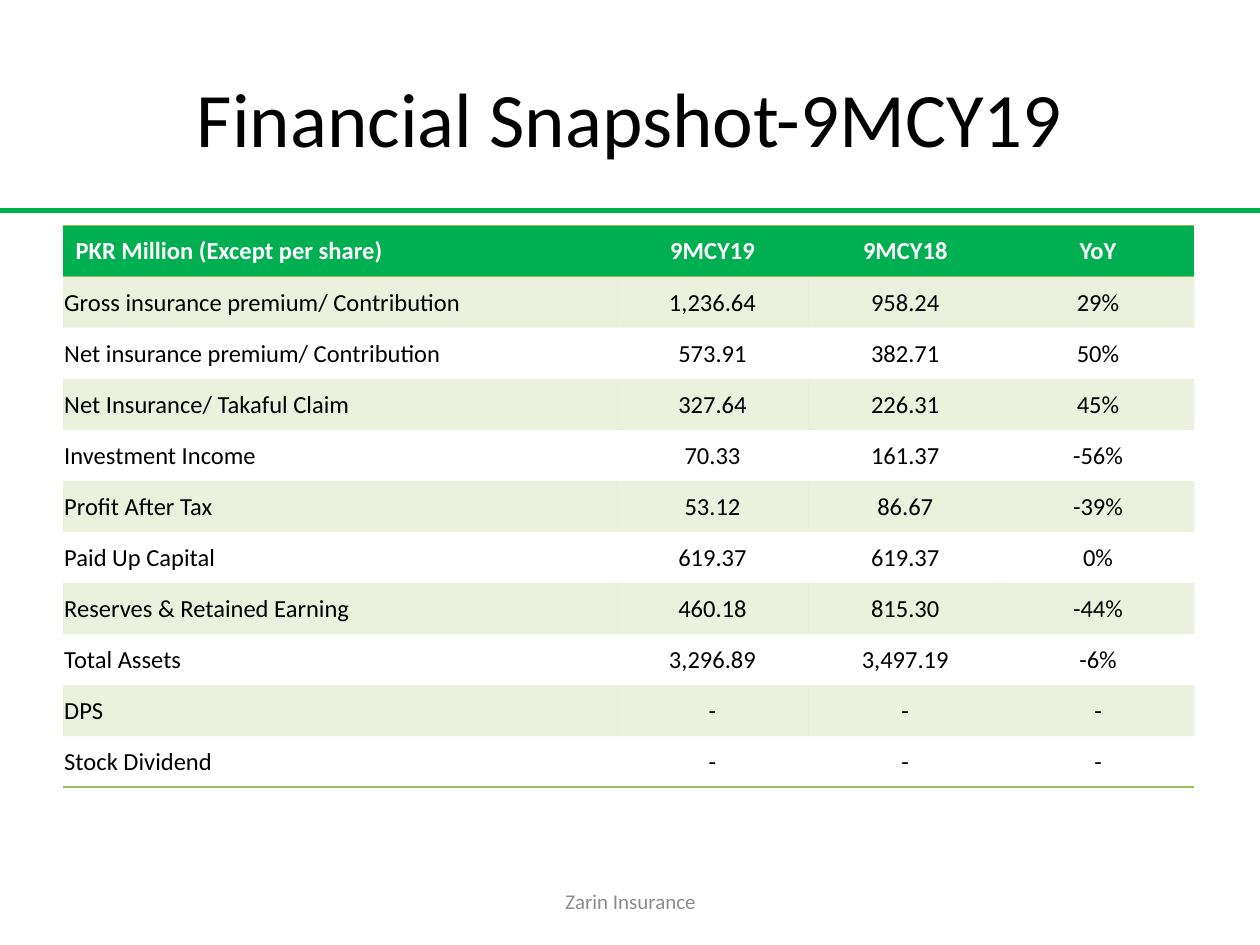
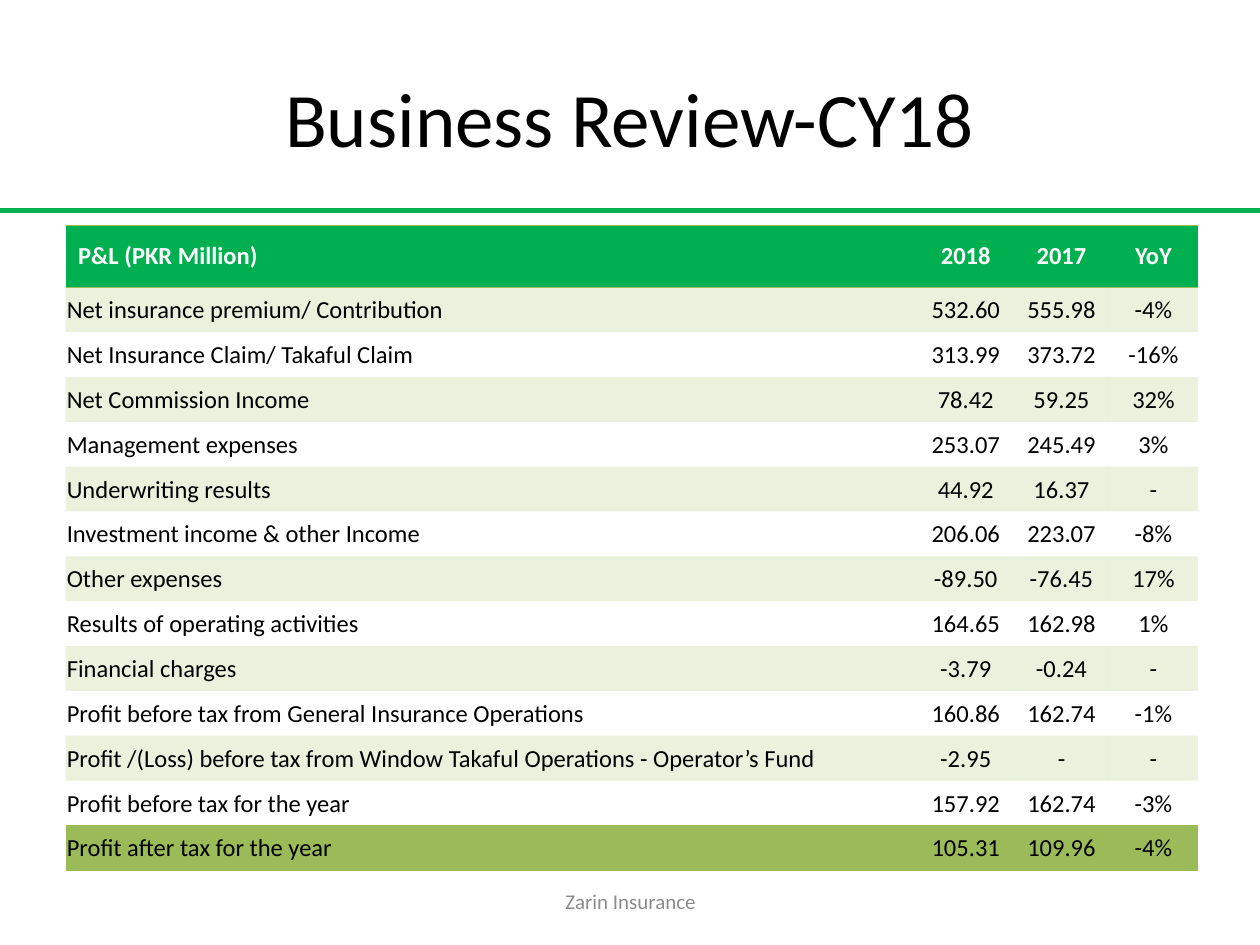
from dataclasses import dataclass

from lxml.etree import SubElement
from pptx import Presentation
from pptx.dml.color import RGBColor as Rgb
from pptx.enum.shapes import MSO_CONNECTOR as Connector
from pptx.enum.text import MSO_ANCHOR as Anchor, PP_ALIGN as Align
from pptx.oxml.ns import qn
from pptx.util import Emu, Inches, Pt

COLORS = {
    "green": "00B050", "olive": "9BBB59", "black": "000000",
    "white": "FFFFFF", "grey": "8C8C8C",
}
FONT = "Calibri"
FOOTER = "Zarin Insurance"
PLAIN_TABLE_STYLE = "{2D5ABB26-0587-4C30-8999-92F81FD0307C}"

# The page is a grid of 100 columns by 75 rows
WIDTH, HEIGHT = Inches(10), Inches(7.5)
COLUMN, ROW = WIDTH / 100, HEIGHT / 75
RULE_ROW = 16.7
TABLE_ROW = 17.9


@dataclass
class Report:
    title: str
    left: float             # grid columns
    widths: list[float]     # grid columns
    header_height: float    # grid rows
    height: float           # grid rows, header included
    rows: list[list[str]]


REPORTS = [
    Report("Financial Snapshot-9MCY19", 5, [43.9, 15.3, 15.3, 15.3], 4.06, 44.6, [
        ["PKR Million (Except per share)", "9MCY19", "9MCY18", "YoY"],
        ["Gross insurance premium/ Contribution", "1,236.64", "958.24", "29%"],
        ["Net insurance premium/ Contribution", "573.91", "382.71", "50%"],
        ["Net Insurance/ Takaful Claim", "327.64", "226.31", "45%"],
        ["Investment Income", "70.33", "161.37", "-56%"],
        ["Profit After Tax", "53.12", "86.67", "-39%"],
        ["Paid Up Capital", "619.37", "619.37", "0%"],
        ["Reserves & Retained Earning", "460.18", "815.30", "-44%"],
        ["Total Assets", "3,296.89", "3,497.19", "-6%"],
        ["DPS", "-", "-", "-"],
        ["Stock Dividend", "-", "-", "-"],
    ]),
    Report("Business Review-CY18", 5.2, [67.6, 7.7, 7.5, 7.1], 4.9, 51.2, [
        ["P&L (PKR Million)", "2018", "2017", "YoY"],
        ["Net insurance premium/ Contribution", "532.60", "555.98", "-4%"],
        ["Net Insurance Claim/ Takaful Claim", "313.99", "373.72", "-16%"],
        ["Net Commission Income", "78.42", "59.25", "32%"],
        ["Management expenses", "253.07", "245.49", "3%"],
        ["Underwriting results", "44.92", "16.37", "-"],
        ["Investment income & other Income", "206.06", "223.07", "-8%"],
        ["Other expenses", "-89.50", "-76.45", "17%"],
        ["Results of operating activities", "164.65", "162.98", "1%"],
        ["Financial charges", "-3.79", "-0.24", "-"],
        ["Profit before tax from General Insurance Operations", "160.86", "162.74", "-1%"],
        ["Profit /(Loss) before tax from Window Takaful Operations - Operator’s Fund",
         "-2.95", "-", "-"],
        ["Profit before tax for the year", "157.92", "162.74", "-3%"],
        ["Profit after tax for the year", "105.31", "109.96", "-4%"],
    ]),
]


def across(columns: float) -> Emu:
    return Emu(round(columns * COLUMN))


def down(rows: float) -> Emu:
    return Emu(round(rows * ROW))


def write(frame, text: str, *, size: float, color: str = "black",
          bold: bool = False, align: Align = Align.CENTER) -> None:
    para = frame.paragraphs[0]
    para.alignment = align
    span = para.add_run()
    span.text = text
    font = span.font
    font.name, font.size, font.bold = FONT, Pt(size), bold
    font.color.rgb = Rgb.from_string(COLORS[color])


def add_border(cell, edge: str) -> None:
    """Draw one olive edge; call before the cell is filled."""
    line = SubElement(cell._tc.get_or_add_tcPr(), qn(f"a:{edge}"), w=str(Pt(1)))
    fill = SubElement(line, qn("a:solidFill"))
    SubElement(fill, qn("a:srgbClr"), val=COLORS["olive"])


def fill_cell(cell, color: str, opacity: int = 100) -> None:
    cell.fill.solid()
    cell.fill.fore_color.rgb = Rgb.from_string(COLORS[color])
    if opacity < 100:
        tint = cell._tc.tcPr.find(".//" + qn("a:srgbClr"))
        SubElement(tint, qn("a:alpha"), val=str(opacity * 1000))


def format_cell(cell, text: str, row: int, column: int, last_row: int) -> None:
    is_header = row == 0
    cell.vertical_anchor = Anchor.MIDDLE
    if is_header:
        add_border(cell, "lnT")
    else:
        cell.margin_left = cell.margin_right = cell.margin_top = Inches(0.01)
        cell.margin_bottom = 0
    if row in (0, last_row):
        add_border(cell, "lnB")

    if is_header:
        fill_cell(cell, "green")
    elif row % 2:
        fill_cell(cell, "olive", opacity=20)
    else:
        cell.fill.background()
    write(cell.text_frame, text, size=14, bold=is_header,
          color="white" if is_header else "black",
          align=Align.CENTER if column else Align.LEFT)


def add_report_table(page, report: Report) -> None:
    rows, widths = report.rows, report.widths
    table = page.shapes.add_table(
        len(rows), len(widths), across(report.left), down(TABLE_ROW),
        across(sum(widths)), down(report.height)).table
    table.horz_banding = False
    table._tbl.tblPr.find(qn("a:tableStyleId")).text = PLAIN_TABLE_STYLE
    for column, width in zip(table.columns, widths):
        column.width = across(width)
    body_height = (report.height - report.header_height) / (len(rows) - 1)
    for row, texts in enumerate(rows):
        table.rows[row].height = down(body_height if row else report.header_height)
        for column, text in enumerate(texts):
            format_cell(table.cell(row, column), text, row, column, len(rows) - 1)


def add_frame(page, title_text: str) -> None:
    # Rule under the title
    rule = page.shapes.add_connector(
        Connector.STRAIGHT, 0, down(RULE_ROW), WIDTH, down(RULE_ROW))
    rule.line.color.rgb = Rgb.from_string(COLORS["green"])
    rule.line.width = Pt(3)
    SubElement(rule._element.spPr, qn("a:effectLst"))

    # Title
    title = page.shapes.title
    title.left, title.top = across(5), down(3)
    title.width, title.height = across(90), down(12.5)
    title.text_frame.vertical_anchor = Anchor.MIDDLE
    write(title.text_frame, title_text, size=44)

    # Footer
    footer = page.shapes.add_textbox(across(34.2), down(69.5), across(31.7), down(4))
    footer.text_frame.word_wrap = True
    footer.text_frame.vertical_anchor = Anchor.MIDDLE
    write(footer.text_frame, FOOTER, size=12, color="grey")


def main() -> None:
    deck = Presentation()
    deck.slide_width, deck.slide_height = WIDTH, HEIGHT
    title_only = deck.slide_layouts[5]
    for report in REPORTS:
        page = deck.slides.add_slide(title_only)
        add_frame(page, report.title)
        add_report_table(page, report)
    deck.save("out.pptx")


if __name__ == "__main__":
    main()
